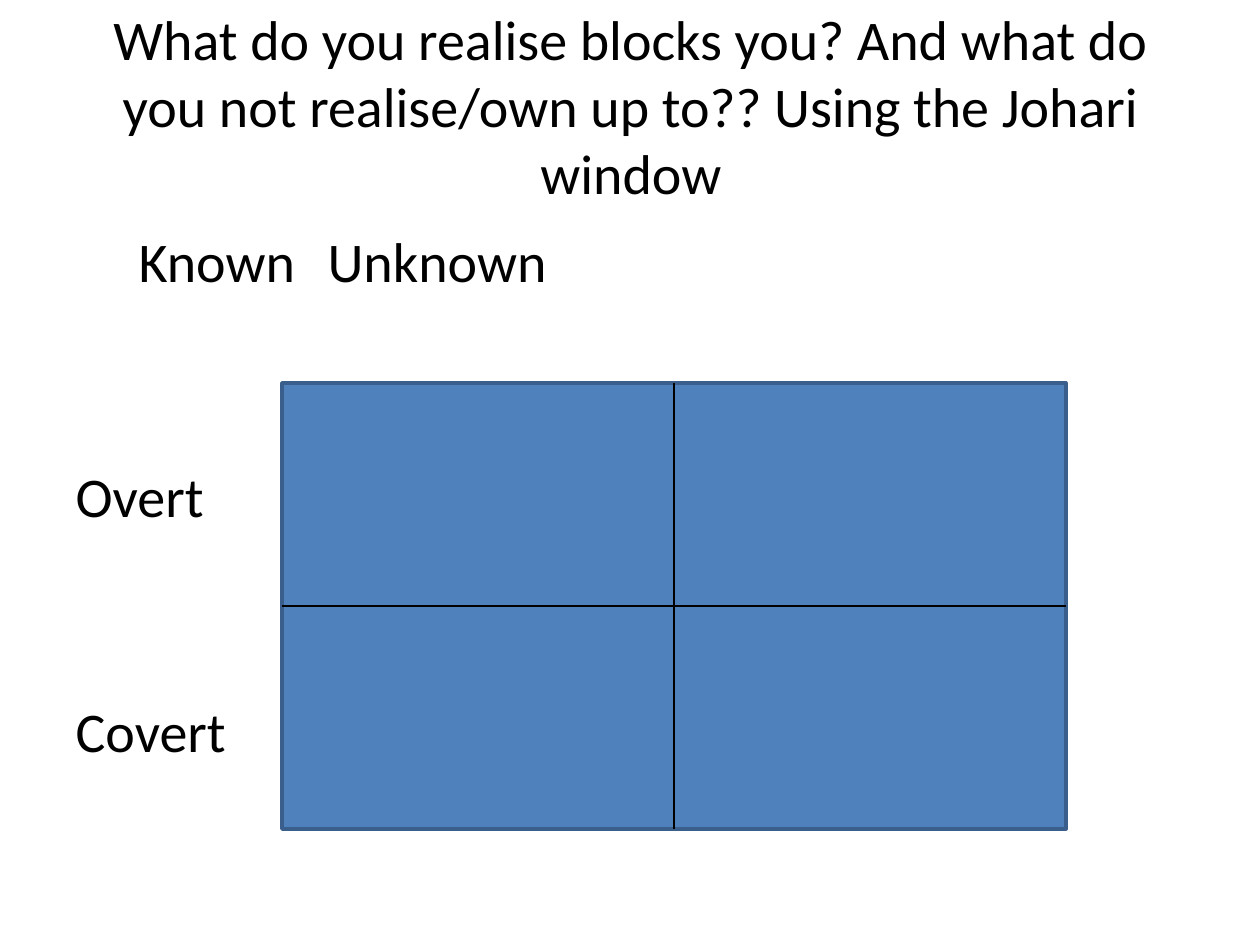
import pptx
import pptx.util
import pptx.dml.color
import pptx.enum.shapes
import pptx.enum.text
import pptx.oxml.ns
from lxml import etree

PX = 914400 // 126
BLACK = pptx.dml.color.RGBColor(0x00, 0x00, 0x00)
WINDOW_BLUE = pptx.dml.color.RGBColor(0x4F, 0x81, 0xBD)
BORDER_BLUE = pptx.dml.color.RGBColor(0x3A, 0x5F, 0x8C)
TOP, LEFT, BOTTOM, RIGHT = range(4)


def apply_format(target, values):
    for name, value in values.items():
        setattr(target, name, value)


def add_xml(parent, tag, **attributes):
    element = etree.SubElement(parent, pptx.oxml.ns.qn(tag))
    for name, value in attributes.items():
        element.set(name, str(value))
    return element


class SlideBuilder:
    font = {"name": "Calibri", "size": pptx.util.Pt(32)}

    def __init__(self, slide):
        self.slide = slide

    def placeholder(self, index, box, anchor):
        shape = self.slide.placeholders[index]
        for name, length in zip(("left", "top", "width", "height"), box):
            setattr(shape, name, length * PX)
        apply_format(shape.text_frame, {
            "word_wrap": True,
            "auto_size": pptx.enum.text.MSO_AUTO_SIZE.NONE,
            "vertical_anchor": anchor,
        })
        return shape.text_frame

    def fill_paragraph(self, paragraph, text, alignment, space_before=0):
        apply_format(paragraph, {
            "text": text,
            "alignment": alignment,
            "space_before": pptx.util.Pt(space_before),
        })
        for run in paragraph.runs:
            apply_format(run.font, self.font)
            run.font.color.rgb = BLACK

    def title(self, text, box):
        frame = self.placeholder(0, box, pptx.enum.text.MSO_ANCHOR.MIDDLE)
        self.fill_paragraph(frame.paragraphs[0], text,
                            pptx.enum.text.PP_ALIGN.CENTER)

    def labels(self, lines, box, gap, tab_stops):
        """Set unbulleted lines, with gap points between them."""
        frame = self.placeholder(1, box, pptx.enum.text.MSO_ANCHOR.TOP)
        for number, text in enumerate(lines):
            paragraph = frame.add_paragraph() if number else frame.paragraphs[0]
            self.fill_paragraph(paragraph, text, pptx.enum.text.PP_ALIGN.LEFT,
                                gap if number else 0)
            properties = paragraph._p.get_or_add_pPr()
            properties.set("marL", "0")
            properties.set("indent", "0")
            add_xml(properties, "a:buNone")
            tabs = add_xml(properties, "a:tabLst")
            for stop in tab_stops:
                add_xml(tabs, "a:tab", pos=stop * PX, algn="l")

    def rectangle(self, box):
        shape = self.slide.shapes.add_shape(
            pptx.enum.shapes.MSO_SHAPE.RECTANGLE, *(length * PX for length in box))
        shape.shadow.inherit = False
        shape.fill.solid()
        shape.fill.fore_color.rgb = WINDOW_BLUE
        shape.line.color.rgb = BORDER_BLUE
        shape.line.width = pptx.util.Pt(2)
        return shape

    def divider(self, shape, start_side, end_side):
        """Join the middles of two sides of a shape."""
        connector = self.slide.shapes.add_connector(
            pptx.enum.shapes.MSO_CONNECTOR.STRAIGHT, 0, 0, 0, 0)
        connector.begin_connect(shape, start_side)
        connector.end_connect(shape, end_side)
        connector.line.color.rgb = BLACK
        connector.line.width = pptx.util.Pt(0.75)
        add_xml(connector._element.spPr, "a:effectLst")


def main():
    presentation = pptx.Presentation()
    presentation.slide_width = pptx.util.Inches(10)
    presentation.slide_height = pptx.util.Inches(7.5)
    builder = SlideBuilder(
        presentation.slides.add_slide(presentation.slide_layouts[1]))

    builder.title("What do you realise blocks you? And what do you not "
                  "realise/own up to?? Using the Johari window",
                  (64, 26, 1134, 158))
    builder.labels(["\tKnown\tUnknown", "Overt", "Covert"],
                   (63, 220, 1134, 624), gap=96, tab_stops=(202, 637))
    window = builder.rectangle((282, 383, 784, 446))
    builder.divider(window, TOP, BOTTOM)
    builder.divider(window, LEFT, RIGHT)

    presentation.save("out.pptx")


if __name__ == "__main__":
    main()
